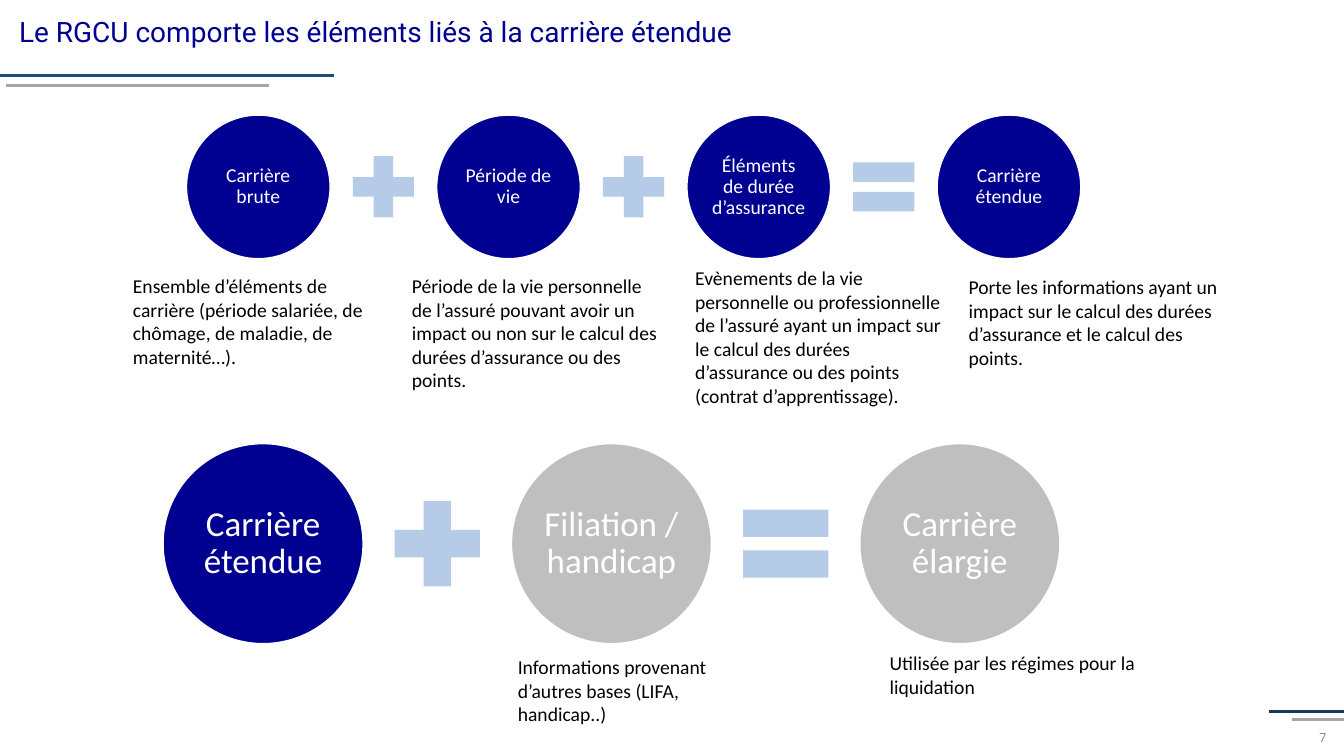
from dataclasses import dataclass

import pptx
import pptx.dml.color
import pptx.enum.shapes
import pptx.enum.text
import pptx.oxml.ns
import pptx.util
from lxml import etree

Cm = pptx.util.Cm
Pt = pptx.util.Pt
SHAPES = pptx.enum.shapes.MSO_SHAPE
ALIGN = pptx.enum.text.PP_ALIGN
ANCHOR = pptx.enum.text.MSO_ANCHOR


@dataclass(frozen=True)
class Theme:
    navy: str = "000091"
    operator: str = "B5CBE7"
    muted: str = "BFBFBF"
    white: str = "FFFFFF"
    black: str = "000000"
    header_rule: str = "1F4E79"
    footer_rule: str = "18375D"
    gray_rule: str = "A5A5A5"
    number: str = "8C8C8C"
    heading_font: str = "Roboto"
    body_font: str = "Calibri"
    title_size: int = 20
    body_size: int = 14
    large_size: int = 25
    number_size: int = 9


THEME = Theme()
OPERATOR_RATIO = 0.58
GAP_RATIO = 0.081
CAPTION_WIDTH = 6.86


def color(value):
    return pptx.dml.color.RGBColor.from_string(value)


def write_text(shape, text, *, size, ink, font=THEME.body_font, align=ALIGN.LEFT,
               anchor=ANCHOR.TOP, spacing=None, before=None, inset=None):
    frame = shape.text_frame
    frame.word_wrap = True
    frame.vertical_anchor = anchor
    if inset is not None:
        frame.margin_left = frame.margin_right = Cm(inset)
        frame.margin_top = frame.margin_bottom = Cm(inset)
    paragraph = frame.paragraphs[0]
    paragraph.alignment = align
    if spacing is not None:
        paragraph.line_spacing = spacing
    if before is not None:
        paragraph.space_before = Pt(before)
    run = paragraph.add_run()
    run.text = text
    run.font.name = font
    run.font.size = Pt(size)
    run.font.color.rgb = color(ink)


def add_text(slide, text, left, top, width, height, **text_format):
    box = slide.shapes.add_textbox(Cm(left), Cm(top), Cm(width), Cm(height))
    write_text(box, text, **text_format)


def add_rule(slide, left, top, width, ink):
    rule = slide.shapes.add_connector(
        pptx.enum.shapes.MSO_CONNECTOR.STRAIGHT,
        Cm(left), Cm(top), Cm(left + width), Cm(top))
    rule.line.color.rgb = color(ink)
    rule.line.width = Pt(2)
    etree.SubElement(rule._element.spPr, pptx.oxml.ns.qn("a:effectLst"))


def add_filled(slide, preset, left, top, side, fill):
    shape = slide.shapes.add_shape(preset, Cm(left), Cm(top), Cm(side), Cm(side))
    shape.shadow.inherit = False
    shape.fill.solid()
    shape.fill.fore_color.rgb = color(fill)
    shape.line.fill.background()
    return shape


def add_header(slide, left, top, title):
    add_text(slide, title, left + 0.23, top + 0.33, 32.03, 1.32,
             size=THEME.title_size, ink=THEME.navy, font=THEME.heading_font,
             spacing=0.9, before=10)
    add_rule(slide, left, top + 1.9, 8.41, THEME.header_rule)
    add_rule(slide, left + 0.15, top + 2.16, 6.63, THEME.gray_rule)


def add_footer(slide, right, bottom, number):
    add_rule(slide, right - 1.88, bottom - 1.12, 1.88, THEME.footer_rule)
    add_rule(slide, right - 1.3, bottom - 0.91, 1.3, THEME.gray_rule)
    add_text(slide, number, right - 0.87, bottom - 0.94, 0.87, 0.94,
             size=THEME.number_size, ink=THEME.number,
             font=THEME.heading_font, anchor=ANCHOR.MIDDLE)


def add_equation(slide, left, top, diameter, terms, size, inset):
    operator_side = diameter * OPERATOR_RATIO
    gap = diameter * GAP_RATIO
    pitch = diameter + operator_side + 2 * gap
    for index, (label, fill) in enumerate(terms):
        circle_left = left + index * pitch
        circle = add_filled(slide, SHAPES.OVAL, circle_left, top, diameter, fill)
        circle.line.color.rgb = color(THEME.white)
        circle.line.width = Pt(1)
        write_text(circle, label, size=size, ink=THEME.white, align=ALIGN.CENTER,
                   anchor=ANCHOR.MIDDLE, spacing=0.9, inset=inset)
        if index < len(terms) - 1:
            is_last = index == len(terms) - 2
            preset = SHAPES.MATH_EQUAL if is_last else SHAPES.MATH_PLUS
            add_filled(slide, preset, circle_left + diameter + gap,
                       top + (diameter - operator_side) / 2,
                       operator_side, THEME.operator)


def add_captions(slide, left, top, captions):
    for offset_x, offset_y, height, text in captions:
        add_text(slide, text, left + offset_x, top + offset_y, CAPTION_WIDTH, height,
                 size=THEME.body_size, ink=THEME.black)


def main():
    presentation = pptx.Presentation()
    presentation.slide_width = Cm(33.87)
    presentation.slide_height = Cm(19.05)
    slide = presentation.slides.add_slide(presentation.slide_layouts[6])

    add_header(slide, 0, 0, "Le RGCU comporte les éléments liés à la carrière étendue")
    add_footer(slide, 33.87, 19.05, "7")

    extended_terms = [
        ("Carrière brute", THEME.navy),
        ("Période de vie", THEME.navy),
        ("Éléments de durée d’assurance", THEME.navy),
        ("Carrière étendue", THEME.navy),
    ]
    add_equation(slide, 4.7, 2.9, 3.62, extended_terms, THEME.body_size, 0.05)
    add_captions(slide, 3.1, 6.58, [
        (0, 0.2, 2.64, "Ensemble d’éléments de carrière (période salariée, de chômage, "
                       "de maladie, de maternité…)."),
        (7.03, 0.2, 3.25, "Période de la vie personnelle de l’assuré pouvant avoir un impact "
                          "ou non sur le calcul des durées d’assurance ou des points."),
        (14.17, 0, 3.84, "Evènements de la vie personnelle ou professionnelle de l’assuré "
                         "ayant un impact sur le calcul des durées d’assurance ou des points "
                         "(contrat d’apprentissage)."),
        (21.06, 0.23, 2.64, "Porte les informations ayant un impact sur le calcul des durées "
                            "d’assurance et le calcul des points."),
    ])

    broad_terms = [
        ("Carrière étendue", THEME.navy),
        ("Filiation / handicap", THEME.muted),
        ("Carrière élargie", THEME.muted),
    ]
    add_equation(slide, 4.11, 11.18, 5.04, broad_terms, THEME.large_size, 0.08)
    add_captions(slide, 12.8, 16.28, [
        (0, 0.1, 2.06, "Informations provenant d’autres bases (LIFA, handicap..)"),
        (9.37, 0, 1.45, "Utilisée par les régimes pour la liquidation"),
    ])

    presentation.save("out.pptx")


if __name__ == "__main__":
    main()
